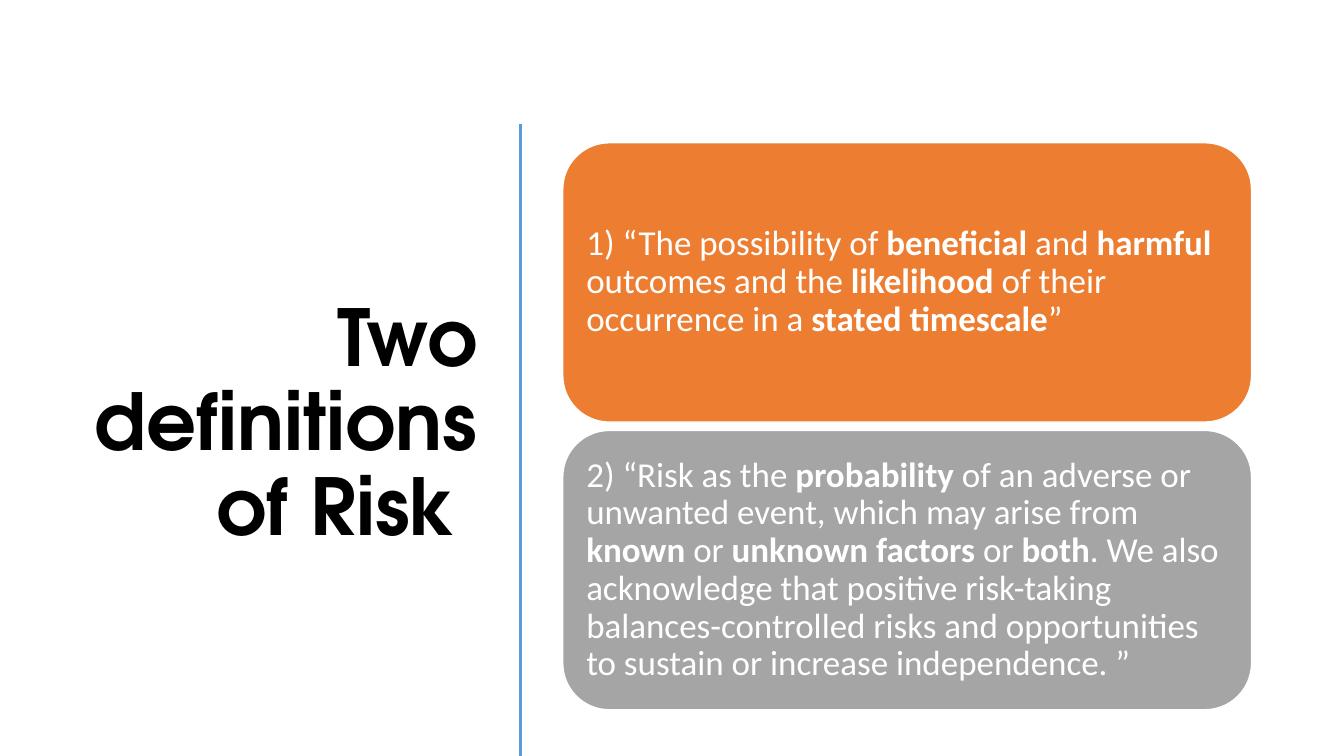
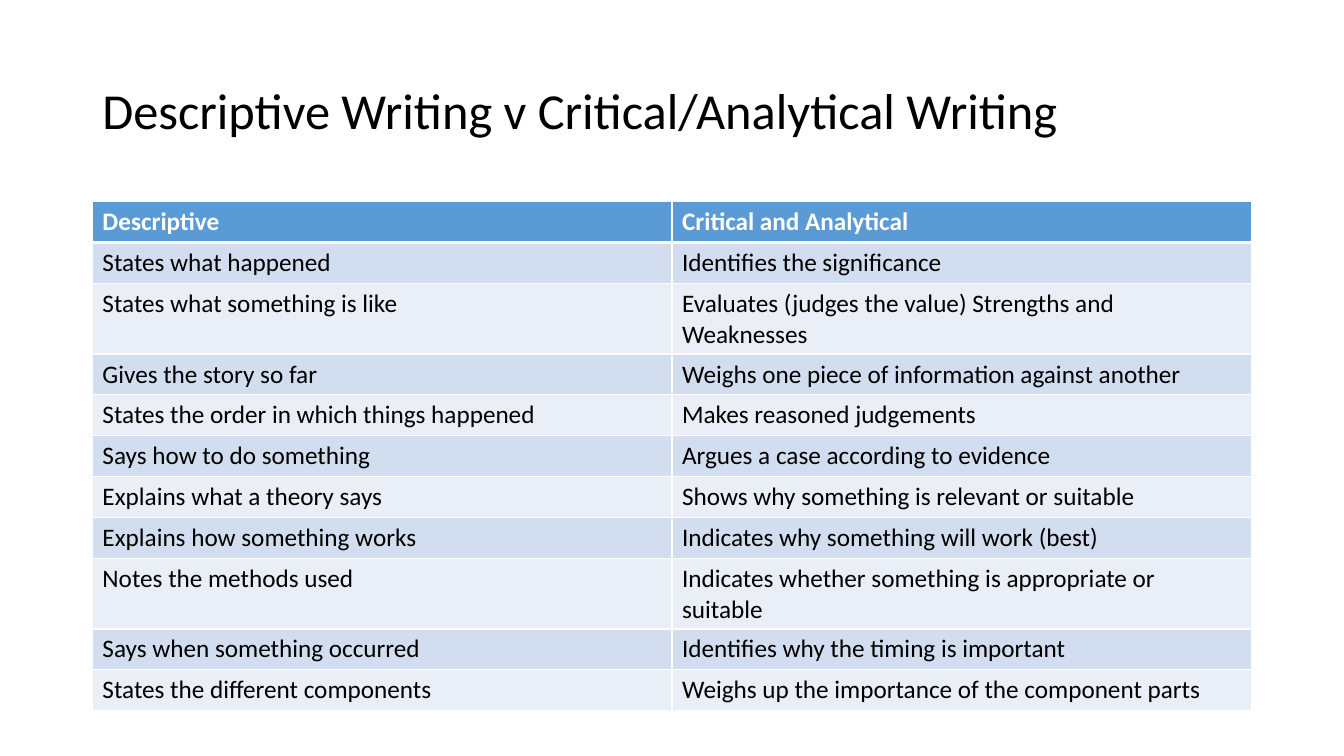
from lxml.etree import SubElement
from pptx import Presentation
from pptx.dml.color import RGBColor
from pptx.enum.shapes import MSO_CONNECTOR as Connector, MSO_SHAPE as Shape
from pptx.enum.text import MSO_ANCHOR as Anchor, PP_ALIGN as Align
from pptx.oxml import parse_xml
from pptx.oxml.ns import nsdecls, qn
from pptx.util import Inches, Pt

COLORS = {"white": "FFFFFF", "black": "000000", "blue": "5B9BD5", "orange": "ED7D31",
          "gray": "A5A5A5", "band": "D2DEEF", "pale": "EAEFF7"}
COLS, ROWS = 160, 90
MARGIN, CONTENT = 11, 138
DEFINITIONS = [
    ("orange", "1) “The possibility of **beneficial** and **harmful** outcomes and the "
               "**likelihood **of their occurrence in a **stated timescale**”"),
    ("gray", "2) “Risk as the **probability** of an adverse or unwanted event, which may "
             "arise from **known** or **unknown factors **or **both**. We also acknowledge "
             "that positive risk-taking balances-controlled risks and opportunities to "
             "sustain or increase independence. ”"),
]
COMPARISON = [
    ("Descriptive", "Critical and Analytical"),
    ("States what happened", "Identifies the significance"),
    ("States what something is like", "Evaluates (judges the value) Strengths and Weaknesses"),
    ("Gives the story so far", "Weighs one piece of information against another"),
    ("States the order in which things happened", "Makes reasoned judgements"),
    ("Says how to do something", "Argues a case according to evidence"),
    ("Explains what a theory says", "Shows why something is relevant or suitable"),
    ("Explains how something works", "Indicates why something will work (best)"),
    ("Notes the methods used", "Indicates whether something is appropriate or suitable"),
    ("Says when something occurred", "Identifies why the timing is important"),
    ("States the different components", "Weighs up the importance of the component parts"),
]


def rgb(name):
    """Return the named colour."""
    return RGBColor.from_string(COLORS[name])


class Deck:
    """Hold the style, the grid and the current slide."""

    def __init__(self):
        """Start a widescreen presentation."""
        self.prs = Presentation()
        self.prs.slide_width, self.prs.slide_height = Inches(13.33), Inches(7.5)

    def add_slide(self):
        """Start a blank slide."""
        self.s = self.prs.slides.add_slide(self.prs.slide_layouts[6])

    def grid(self, *lengths):
        """Turn alternating columns and rows into slide lengths."""
        units = self.prs.slide_width / COLS, self.prs.slide_height / ROWS
        return [round(n * units[i % 2]) for i, n in enumerate(lengths)]

    def add_runs(self, p, text, size, color, font="Calibri", bold=False):
        """Fill a paragraph, with bold toggled by double asterisks."""
        for i, part in enumerate(text.split("**")):
            r = p.add_run()
            r.text = part
            r.font.name, r.font.size = font, Pt(size)
            r.font.bold = bold or i % 2 == 1
            r.font.color.rgb = rgb(color)

    def body(self, sp, text, size, color, align=Align.LEFT, **style):
        """Set wrapped, vertically centred text in a shape."""
        tf = sp.text_frame
        tf.word_wrap, tf.vertical_anchor = True, Anchor.MIDDLE
        p = tf.paragraphs[0]
        p.alignment, p.line_spacing = align, 0.9
        self.add_runs(p, text, size, color, **style)

    def title(self, text, box, size, **style):
        """Add a black slide title."""
        sp = self.s.shapes.add_textbox(*self.grid(*box))
        self.body(sp, text, size, "black", **style)

    def divider(self, col, top, bottom):
        """Add a vertical rule."""
        line = self.s.shapes.add_connector(
            Connector.STRAIGHT, *self.grid(col, top, col, bottom))
        line.line.color.rgb, line.line.width = rgb("blue"), Pt(2)
        SubElement(line._element.spPr, qn("a:effectLst"))

    def card(self, text, fill, box):
        """Add a rounded card with white text."""
        sp = self.s.shapes.add_shape(Shape.ROUNDED_RECTANGLE, *self.grid(*box))
        sp.shadow.inherit = False
        sp.fill.solid()
        sp.fill.fore_color.rgb = rgb(fill)
        sp.line.color.rgb, sp.line.width = rgb("white"), Pt(1)
        tf = sp.text_frame
        tf.margin_left = tf.margin_right = tf.margin_top = tf.margin_bottom = Inches(0.1)
        self.body(sp, text, 25, "white")

    def borders(self, cell, top, bottom):
        """Draw white borders around a cell."""
        tc_pr = cell._tc.get_or_add_tcPr()
        for i, (side, width) in enumerate(zip("LRTB", (1, 1, top, bottom))):
            tc_pr.insert(i, parse_xml(
                f'<a:ln{side} {nsdecls("a")} w="{Pt(width)}"><a:solidFill>'
                f'<a:srgbClr val="{COLORS["white"]}"/></a:solidFill></a:ln{side}>'))

    def table(self, rows, left, top, width, row_height):
        """Add a banded table with a header row."""
        box = self.grid(left, top, width, row_height * len(rows))
        table = self.s.shapes.add_table(len(rows), len(rows[0]), *box).table
        for i, texts in enumerate(rows):
            table.rows[i].height = self.grid(0, row_height)[1]
            header = i == 0
            fill = "blue" if header else ("pale", "band")[i % 2]
            for j, text in enumerate(texts):
                cell = table.cell(i, j)
                cell.fill.solid()
                cell.fill.fore_color.rgb = rgb(fill)
                self.borders(cell, 3 if i == 1 else 1, 3 if header else 1)
                self.add_runs(cell.text_frame.paragraphs[0], text, 18,
                              "white" if header else "black", bold=header)


def main():
    """Build and save the slides."""
    deck = Deck()

    deck.add_slide()
    deck.title("Two definitions of Risk ", (6.25, 14, 51.75, 73.3), 56,
               align=Align.RIGHT, font="TeX Gyre Adventor", bold=True)
    deck.divider(62, 14.8, ROWS)
    height, gap = 33.25, 1
    for i, (fill, text) in enumerate(DEFINITIONS):
        deck.card(text, fill, (67, 17 + i * (height + gap), 82, height))

    deck.add_slide()
    deck.title("Descriptive Writing v Critical/Analytical Writing",
               (MARGIN, 4.8, CONTENT, 17.4), 36)
    deck.table(COMPARISON, MARGIN, 24, CONTENT, 4.87)

    deck.prs.save("out.pptx")


if __name__ == "__main__":
    main()
